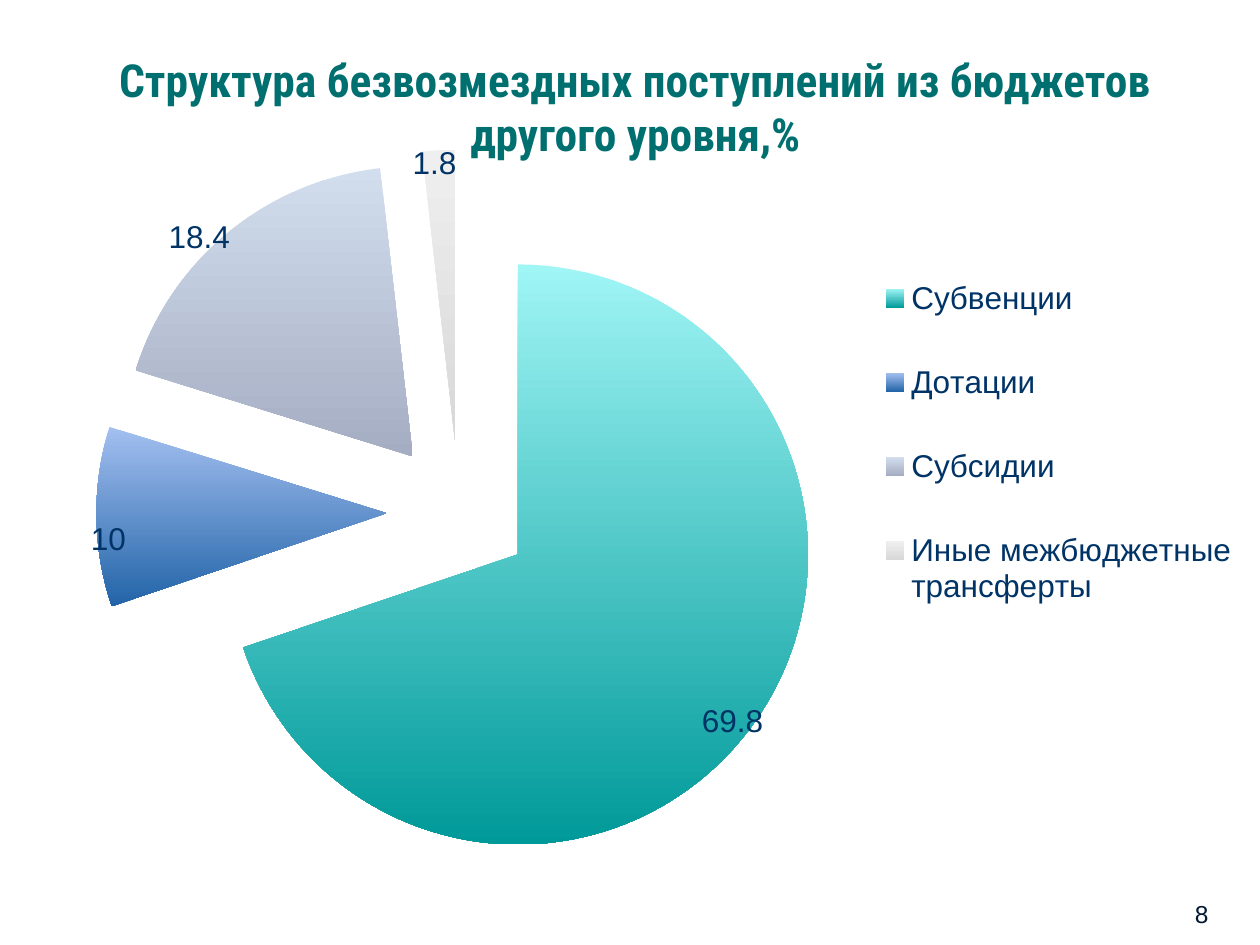
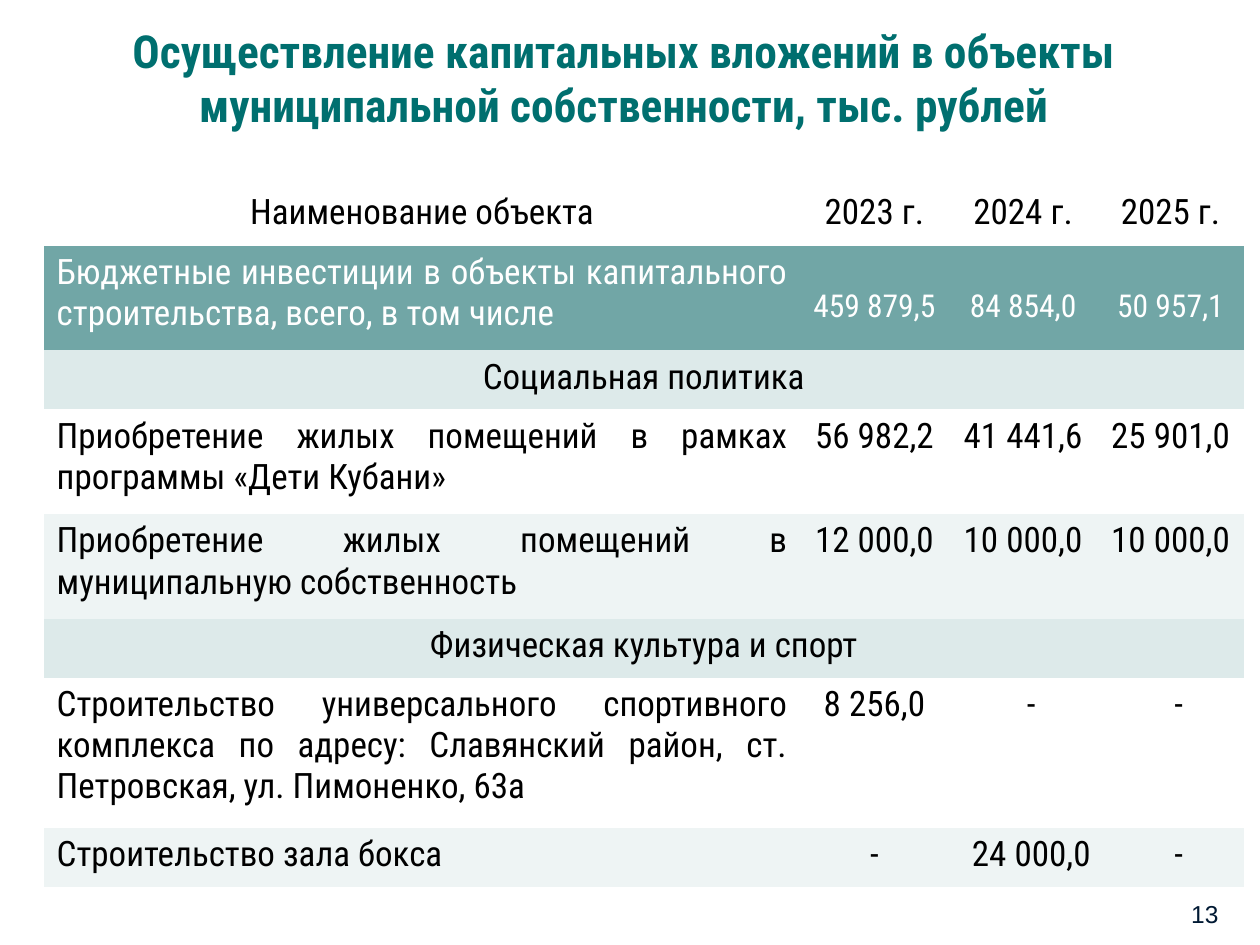
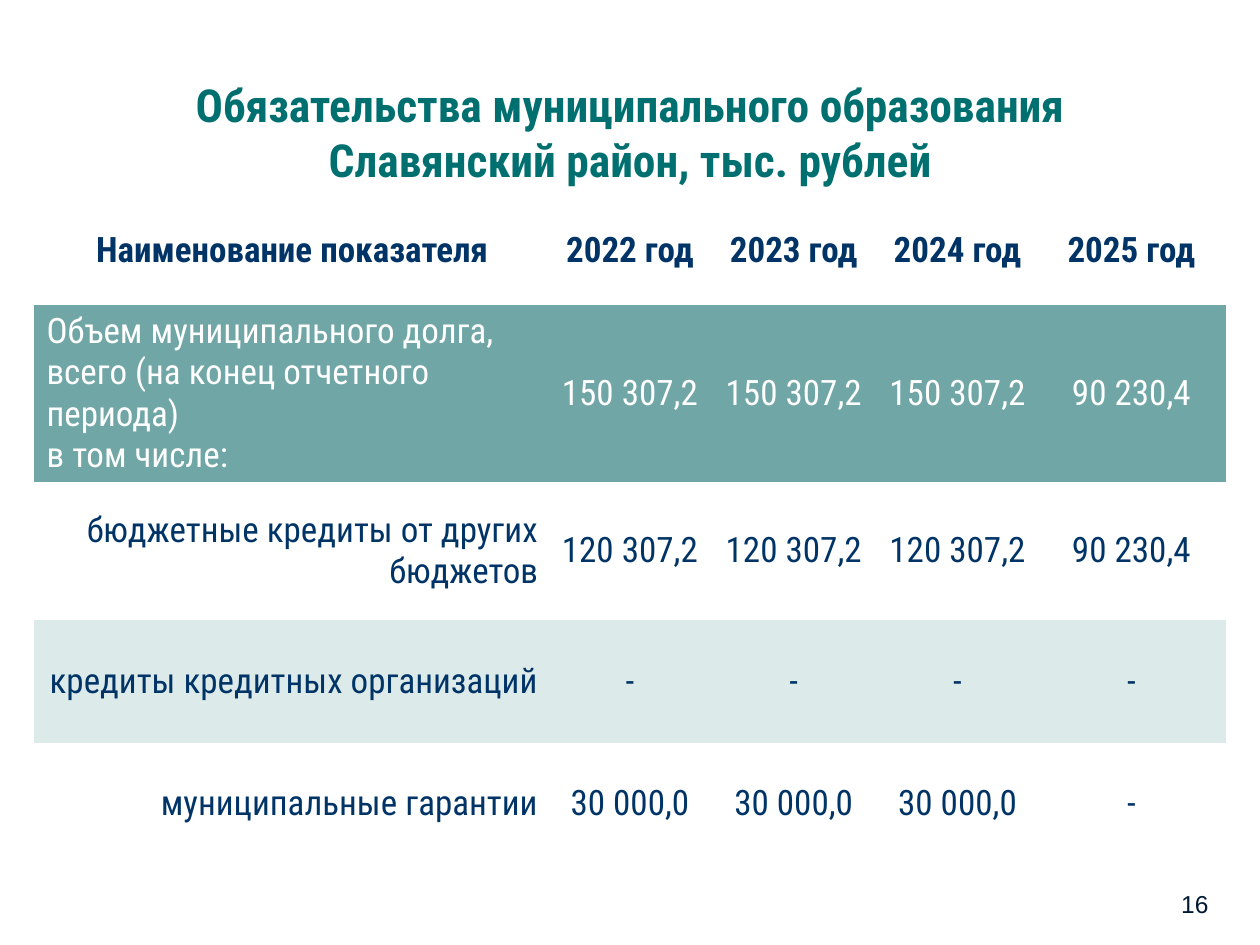
from pptx import Presentation
from pptx import util as u
from pptx.chart.data import CategoryChartData
from pptx.dml.color import RGBColor
from pptx.enum import chart as charts, text
from pptx.oxml import parse_xml
from pptx.oxml.ns import nsdecls

# Shared style
TEAL = RGBColor(0x00, 0x6F, 0x6F)
NAVY = RGBColor(0x00, 0x33, 0x66)
NUMBER_NAVY = RGBColor(0x00, 0x19, 0x33)
BLACK = RGBColor(0x00, 0x00, 0x00)
WHITE = RGBColor(0xFF, 0xFF, 0xFF)
BAND_DARK = RGBColor(0x71, 0xA6, 0xA6)
BAND_MID = RGBColor(0xDD, 0xEA, 0xEA)
BAND_LIGHT = RGBColor(0xEE, 0xF4, 0xF4)
HEAD_FONT, BODY_FONT = "Roboto Condensed", "Arial"
PLAIN_TABLE = "{2D5ABB26-0587-4C30-8999-92F81FD0307C}"
LEFT, CENTER, RIGHT, JUSTIFY = (text.PP_ALIGN.LEFT, text.PP_ALIGN.CENTER,
                                text.PP_ALIGN.RIGHT, text.PP_ALIGN.JUSTIFY)
TOP, MIDDLE, BOTTOM = (text.MSO_ANCHOR.TOP, text.MSO_ANCHOR.MIDDLE,
                       text.MSO_ANCHOR.BOTTOM)

# Slide 1: category, value, gradient from top to bottom, label shift
REVENUE_TITLE = "Структура безвозмездных поступлений из бюджетов другого уровня,%"
REVENUE = [
    ("Субвенции", 69.8, ("A0F5F5", "009999"), (0.08, 0.1)),
    ("Дотации", 10, ("A3BFF0", "2264A8"), (-0.11, 0.03)),
    ("Субсидии", 18.4, ("D2DEEE", "A5ADC2"), (-0.1, -0.13)),
    ("Иные межбюджетные трансферты", 1.8, ("EFEFEF", "D8D8D8"), (-0.01, -0.16)),
]
PLOT_LAYOUT = (0.05, 0.09, 0.6, 0.88)
LEGEND_LAYOUT = (0.69, 0.19, 0.31, 0.51)

# Slide 2: row fill, cells by starting column
INVEST_TITLE = ("Осуществление капитальных вложений в объекты муниципальной "
                "собственности, тыс. рублей")
INVEST_COLUMNS = [6, 1.18, 1.18, 0.13, 1.03]
INVEST_HEIGHTS = [0.48, 0.83, 0.47, 0.83, 0.83, 0.47, 1.19, 0.47]
INVEST_ROWS = [
    (None, {0: "Наименование объекта", 1: "2023 г.", 2: "2024 г.", 3: "2025 г."}),
    (BAND_DARK, {0: "Бюджетные инвестиции в объекты капитального строительства, "
                    "всего, в том числе",
                 1: "459 879,5", 2: "84 854,0", 3: "50 957,1"}),
    (BAND_MID, {0: "Социальная политика"}),
    (None, {0: "Приобретение жилых помещений в рамках программы «Дети Кубани»",
            1: "56 982,2", 2: "41 441,6", 3: "25 901,0"}),
    (BAND_LIGHT, {0: "Приобретение жилых помещений в муниципальную собственность",
                  1: "12 000,0", 2: "10 000,0", 3: "10 000,0"}),
    (BAND_MID, {0: "Физическая культура и спорт"}),
    (None, {0: "Строительство универсального спортивного комплекса по адресу: "
               "Славянский район, ст. Петровская, ул. Пимоненко, 63а",
            1: "8 256,0", 2: "-", 4: "-"}),
    (BAND_LIGHT, {0: "Строительство зала бокса", 1: "-", 2: "24 000,0", 4: "-"}),
]

# Slide 3: row fill, cells
DEBT_TITLE = "Обязательства муниципального образования Славянский район, тыс. рублей"
DEBT_COLUMNS = [4.1, 1.26, 1.34, 1.26, 1.5]
DEBT_HEIGHTS = [0.87, 1.29, 1.09, 0.98, 0.96]
DEBT_ROWS = [
    (WHITE, ["Наименование показателя", "2022 год", "2023 год", "2024 год", "2025 год"]),
    (BAND_DARK, ["Объем муниципального долга, всего (на конец отчетного периода)\n"
                 "в том числе:", "150 307,2", "150 307,2", "150 307,2", "90 230,4"]),
    (WHITE, ["бюджетные кредиты от других бюджетов",
             "120 307,2", "120 307,2", "120 307,2", "90 230,4"]),
    (BAND_MID, ["кредиты кредитных организаций", "-", "-", "-", "-"]),
    (WHITE, ["муниципальные гарантии", "30 000,0", "30 000,0", "30 000,0", "-"]),
]


def inches(*lengths):
    return [u.Inches(length) for length in lengths]


def set_font(font, color, size, name, bold=False):
    for key, value in {"size": u.Pt(size), "name": name, "bold": bold}.items():
        setattr(font, key, value)
    font.color.rgb = color


def write(frame, content, align, **font):
    frame.text = content
    for paragraph in frame.paragraphs:
        paragraph.alignment = align
        set_font(paragraph.runs[0].font, **font)


def add_slide(presentation, title, box, anchor, number, number_place):
    """Add a slide with its title and page number."""
    slide = presentation.slides.add_slide(presentation.slide_layouts[5])
    shape = slide.shapes.title
    shape.left, shape.top, shape.width, shape.height = inches(*box)
    number_box = slide.shapes.add_textbox(*inches(*number_place, 2.33, 0.52))
    for frame, position in ((shape.text_frame, anchor), (number_box.text_frame, BOTTOM)):
        settings = {"word_wrap": True, "auto_size": text.MSO_AUTO_SIZE.NONE,
                    "vertical_anchor": position}
        for key, value in settings.items():
            setattr(frame, key, value)
    write(shape.text_frame, title, CENTER, color=TEAL, size=26, name=HEAD_FONT, bold=True)
    write(number_box.text_frame, number, RIGHT, color=NUMBER_NAVY, size=14, name=BODY_FONT)
    return slide


def add_plain_table(slide, left, top, columns, heights):
    frame = slide.shapes.add_table(len(heights), len(columns),
                                   *inches(left, top, sum(columns), sum(heights)))
    frame.element.xpath(".//a:tableStyleId")[0].text = PLAIN_TABLE
    table = frame.table
    table.first_row = table.horz_banding = False
    for column, width in zip(table.columns, columns):
        column.width = u.Inches(width)
    for row, height in zip(table.rows, heights):
        row.height = u.Inches(height)
    return table


def fill_cell(cell, content, align, fill, anchor, margins, **font):
    if fill is None:
        cell.fill.background()
    else:
        cell.fill.solid()
        cell.fill.fore_color.rgb = fill
    cell.vertical_anchor = anchor
    sides = ("margin_left", "margin_top", "margin_right", "margin_bottom")
    for side, margin in zip(sides, inches(*margins)):
        setattr(cell, side, margin)
    write(cell.text_frame, content, align, name=HEAD_FONT, **font)


def layout_xml(**values):
    parts = "".join(f'<c:{key} val="{value}"/>' for key, value in values.items())
    return parse_xml(f'<c:layout {nsdecls("c")}><c:manualLayout>{parts}'
                     '</c:manualLayout></c:layout>')


def area_layout(box):
    return dict(xMode="edge", yMode="edge", **dict(zip("xywh", box)))


def add_revenue_pie(slide):
    data = CategoryChartData()
    data.categories = [row[0] for row in REVENUE]
    data.add_series("Series 1", [row[1] for row in REVENUE])
    chart = slide.shapes.add_chart(charts.XL_CHART_TYPE.PIE,
                                   *inches(0.28, 0.6, 9.61, 6.54), data).chart
    set_font(chart.font, NAVY, 18, BODY_FONT)
    chart.has_title = False
    chart.has_legend = True
    chart.legend.position = charts.XL_LEGEND_POSITION.RIGHT
    chart.legend.include_in_layout = False
    plot = chart.plots[0]
    plot.vary_by_categories = True

    # Slices and their labels
    series = plot.series[0]
    for index, (_, _, gradient, _) in enumerate(REVENUE):
        point = series.points[index]
        fill = point.format.fill
        fill.gradient()
        fill.gradient_angle = 270
        for stop, color in zip(fill.gradient_stops, gradient):
            stop.color.rgb = RGBColor.from_string(color)
        point.format.line.fill.background()
        point.data_label.position = charts.XL_LABEL_POSITION.CENTER

    # Exploded slices, moved labels, plot and legend areas
    root = chart.element
    root.xpath(".//c:dPt")[0].addprevious(
        parse_xml(f'<c:explosion {nsdecls("c")} val="25"/>'))
    for label, row in zip(root.xpath(".//c:dLbl"), REVENUE):
        x, y = row[3]
        label.xpath("c:idx")[0].addnext(layout_xml(x=x, y=y))
    plot_area = root.xpath(".//c:plotArea")[0]
    for layout in plot_area.xpath("c:layout"):
        plot_area.remove(layout)
    plot_area.insert(0, layout_xml(layoutTarget="inner", **area_layout(PLOT_LAYOUT)))
    legend = root.xpath(".//c:legend")[0]
    for layout in legend.xpath("c:layout"):
        legend.remove(layout)
    legend.xpath("c:legendPos")[0].addnext(layout_xml(**area_layout(LEGEND_LAYOUT)))


def add_invest_table(slide):
    table = add_plain_table(slide, 0.35, 1.47, INVEST_COLUMNS, INVEST_HEIGHTS)
    for r, (fill, cells) in enumerate(INVEST_ROWS):
        starts = [*cells, len(INVEST_COLUMNS)]
        total = fill == BAND_DARK
        for start, end in zip(starts, starts[1:]):
            cell = table.cell(r, start)
            if end - start > 1:
                cell.merge(table.cell(r, end - 1))
            named = start == 0 and r > 0 and len(cells) > 1
            lowered = total and start > 0
            fill_cell(cell, cells[start], JUSTIFY if named else CENTER, fill, TOP,
                      (0.1, 0.34 if lowered else 0.05, 0.1, 0.05),
                      color=WHITE if total else BLACK, size=18 if lowered else 20)


def add_debt_table(slide):
    table = add_plain_table(slide, 0.27, 1.55, DEBT_COLUMNS, DEBT_HEIGHTS)
    for r, (fill, cells) in enumerate(DEBT_ROWS):
        total = fill == BAND_DARK
        for c, content in enumerate(cells):
            align = CENTER if r == 0 or c > 0 else LEFT if total else RIGHT
            margins = (0.02, 0, 0.02, 0) if r and c else (0.1, 0.05, 0.1, 0.05)
            fill_cell(table.cell(r, c), content, align, fill, MIDDLE, margins,
                      color=WHITE if total else NAVY, size=20, bold=r == 0)


def main():
    presentation = Presentation()
    presentation.slide_width, presentation.slide_height = inches(10, 7.5)
    add_revenue_pie(add_slide(presentation, REVENUE_TITLE, (0.28, 0.21, 9.53, 1.27),
                              MIDDLE, "8", (7.36, 6.9)))
    add_invest_table(add_slide(presentation, INVEST_TITLE, (0.35, 0.13, 9.21, 0.87),
                               TOP, "13", (7.44, 6.9)))
    add_debt_table(add_slide(presentation, DEBT_TITLE, (0.51, 0.37, 8.99, 1.35),
                             MIDDLE, "16", (7.36, 6.82)))
    presentation.save("out.pptx")


if __name__ == "__main__":
    main()
